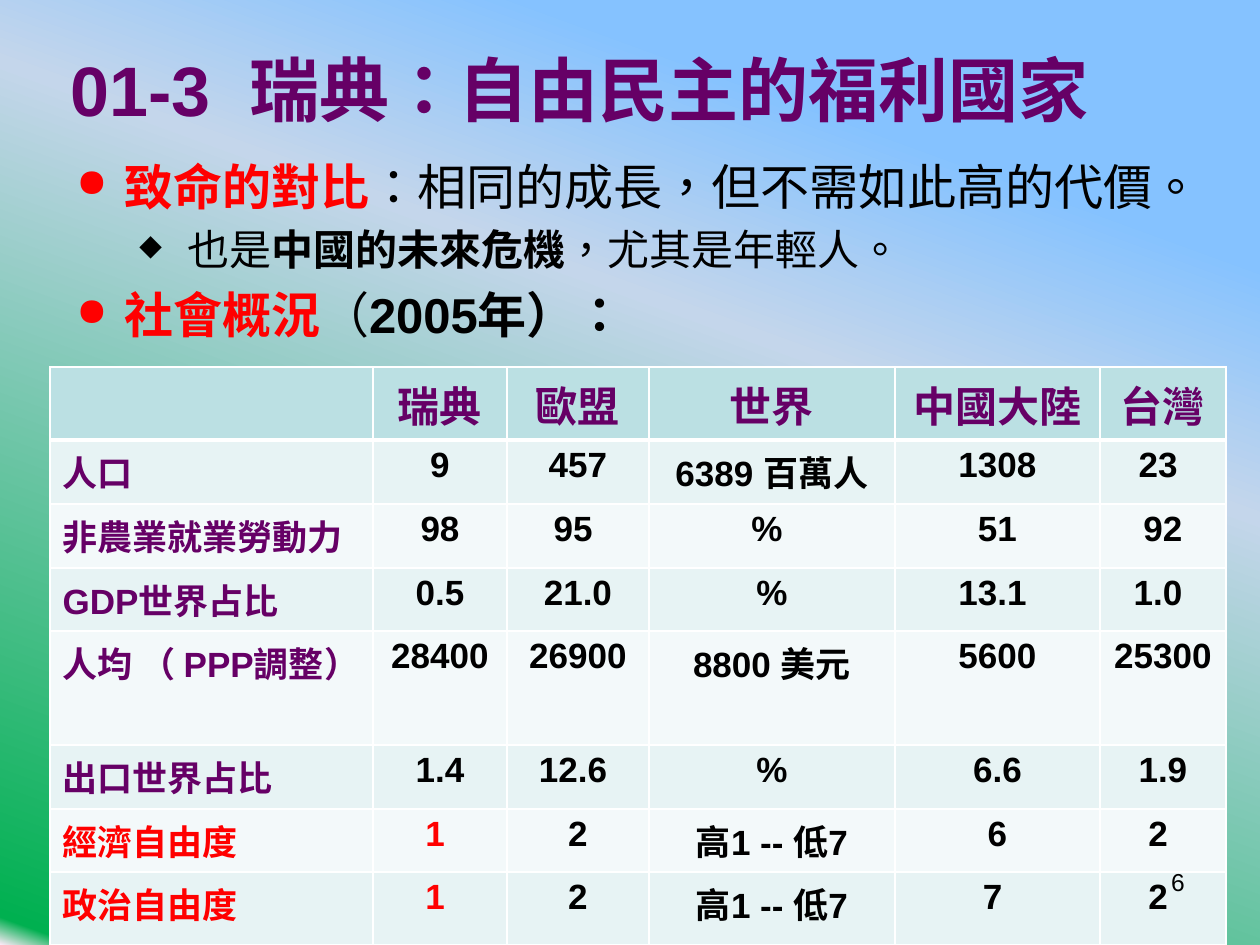
"""Build the slide comparing Sweden's welfare state with other regions."""
from copy import deepcopy
from lxml import etree
from pptx import Presentation
from pptx.dml.color import RGBColor
from pptx.enum.lang import MSO_LANGUAGE_ID
from pptx.enum.text import MSO_ANCHOR, PP_ALIGN
from pptx.oxml.ns import qn
from pptx.util import Pt

MID, TOP = MSO_ANCHOR.MIDDLE, MSO_ANCHOR.TOP
LEFT, CENTER, RIGHT = PP_ALIGN.LEFT, PP_ALIGN.CENTER, PP_ALIGN.RIGHT
LANG = MSO_LANGUAGE_ID.TRADITIONAL_CHINESE
THEME = {
    "font": "Arial", "plum": "660066", "red": "FF0000", "ink": "000000",
    "line": "FFFFFF", "head": "BBE0E3", "bands": ("F3F9FA", "E7F3F4"),
    "sky": [(19, "85C2FF"), (37, "C4D6EB"), (98, "00B050"), (100, "FFEBFA")],
    "angle": 110, "title": 40, "body": 28, "sub": 24, "cell": 20, "page": 14,
}
TITLE = "01-3  瑞典：自由民主的福利國家"
PAGE = "6"
BODY = [
    (0, [("致命的對比", "red", True), ("：相同的成長，但不需如此高的代價。", "ink", False)]),
    (1, [(" 也是", "ink", False), ("中國的未來危機", "ink", True),
         ("，尤其是年輕人。", "ink", False)]),
    (0, [("社會概況", "red", True), ("（", "ink", False), ("2005年）：", "ink", True)]),
]
LEVELS = [("body", "●", 80, 48, 48, 6), ("sub", "◆", 70, 102, 39, 5)]
ROWS = [
    ["", "瑞典", "歐盟", "世界", "中國大陸", "台灣"],
    ["人口", "9", "457", "6389 百萬人", "1308", "23 "],
    ["非農業就業勞動力", "98", "95 ", "% ", "51", "92"],
    ["GDP世界占比", "0.5", "21.0", "%", "13.1 ", "1.0 "],
    ["人均 （ PPP調整）", "28400", "26900", "8800 美元", "5600", "25300 "],
    ["出口世界占比", "1.4", "12.6 ", "%", "6.6", "1.9"],
    ["經濟自由度", "1 ", "2", "高1 -- 低7", "6", "2 "],
    ["政治自由度", "1 ", "2", "高1 -- 低7", "7 ", "2 "],
]
WIDTHS = [323, 134, 142, 246, 205, 126]
HEIGHTS = [73, 64, 64, 63, 114, 64, 63, 73]
RED_FROM = 6


def px(n):
    return round(n * 914400 / 126)


def write(para, text, size, color="ink", bold=False):
    run = para.add_run()
    run.text = text
    look = {"name": THEME["font"], "size": Pt(THEME[size]), "bold": bold,
            "language_id": LANG}
    for key, value in look.items():
        setattr(run.font, key, value)
    run.font.color.rgb = RGBColor.from_string(THEME[color])


def add_box(slide, area, anchor=TOP):
    frame = slide.shapes.add_textbox(*map(px, area)).text_frame
    for key, value in {"word_wrap": True, "vertical_anchor": anchor}.items():
        setattr(frame, key, value)
    return frame


def paint(slide):
    fill = slide.background.fill
    fill.gradient()
    fill.gradient_angle = 360 - THEME["angle"]
    stops = slide.element.find(".//" + qn("a:gsLst"))
    while len(stops) < len(THEME["sky"]):
        stops.append(deepcopy(stops[0]))
    for stop, (place, color) in zip(fill.gradient_stops, THEME["sky"]):
        stop.position = place / 100
        stop.color.rgb = RGBColor.from_string(color)


def add_body(slide):
    frame = add_box(slide, (64, 150, 1154, 202))
    for i, (level, parts) in enumerate(BODY):
        para = frame.add_paragraph() if i else frame.paragraphs[0]
        size, mark, scale, left, hang, gap = LEVELS[level]
        para.level, para.space_before = level, Pt(gap)
        props = para._p.get_or_add_pPr()
        props.set("marL", str(px(left)))
        props.set("indent", str(-px(hang)))
        etree.SubElement(props, qn("a:buSzPct"), val=str(scale * 1000))
        etree.SubElement(props, qn("a:buChar"), char=mark)
        for text, color, bold in parts:
            write(para, text, size, color, bold)


def edge(cell, heavy):
    props = cell._tc.get_or_add_tcPr()
    for side in "LRTB":
        width = Pt(3 if side in heavy else 1)
        line = etree.SubElement(props, qn("a:ln" + side), w=str(width))
        fill = etree.SubElement(line, qn("a:solidFill"))
        etree.SubElement(fill, qn("a:srgbClr"), val=THEME["line"])


def add_grid(slide):
    area = map(px, (50, 367, sum(WIDTHS), sum(HEIGHTS)))
    grid = slide.shapes.add_table(len(ROWS), len(WIDTHS), *area).table
    for col, width in zip(grid.columns, WIDTHS):
        col.width = px(width)
    for r, row in enumerate(ROWS):
        grid.rows[r].height = px(HEIGHTS[r])
        for c, text in enumerate(row):
            cell = grid.cell(r, c)
            edge(cell, {0: "B", 1: "T"}.get(r, ""))
            cell.fill.solid()
            shade = THEME["bands"][r % 2] if r else THEME["head"]
            cell.fill.fore_color.rgb = RGBColor.from_string(shade)
            para = cell.text_frame.paragraphs[0]
            para.alignment = CENTER if c else LEFT
            color = "plum" if r == 0 or c == 0 else "ink"
            if r >= RED_FROM and c < 2:
                color = "red"
            if text:
                write(para, text, "cell" if r else "sub", color, True)


def main():
    deck = Presentation()
    deck.slide_width, deck.slide_height = px(1260), px(945)
    slide = deck.slides.add_slide(deck.slide_layouts[6])
    paint(slide)
    title = add_box(slide, (58, 20, 1134, 137), MID)
    write(title.paragraphs[0], TITLE, "title", "plum", True)
    add_body(slide)
    add_grid(slide)
    page = add_box(slide, (903, 861, 294, 66)).paragraphs[0]
    page.alignment = RIGHT
    write(page, PAGE, "page")
    deck.save("out.pptx")


if __name__ == "__main__":
    main()
